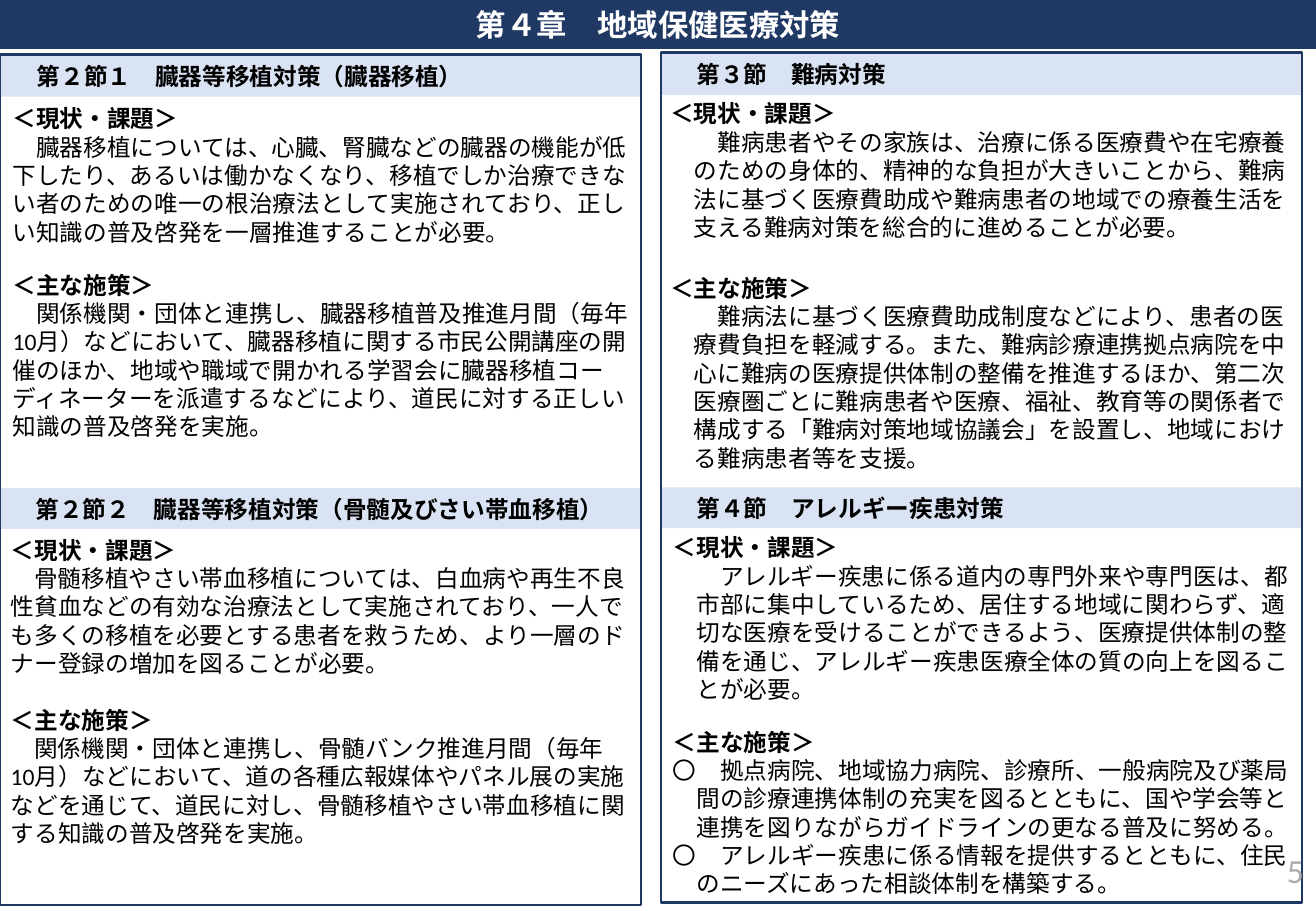
from pptx import Presentation
from pptx.dml.color import RGBColor
from pptx.enum.shapes import MSO_SHAPE as Shape
from pptx.enum.text import MSO_ANCHOR as Anchor, PP_ALIGN as Align
from pptx.util import Pt

NAVY, PALE, BLACK, WHITE, GREY = "203864", "DAE3F3", "000000", "FFFFFF", "AFABAB"
EM = 14
ISSUES, MEASURES = "＜現状・課題＞", "＜主な施策＞"


def color(value):
    return RGBColor.from_string(value)


class SlideBuilder:
    base = {"name": "Calibri", "size": Pt(EM), "bold": False}

    def __init__(self, deck):
        self.page = deck.slides.add_slide(deck.slide_layouts[6])

    def add_span(self, para, text, ink=BLACK, left=0, first=0, **style):
        span = para.add_run()
        span.text = text
        for key, value in {**self.base, **style}.items():
            setattr(span.font, key, value)
        span.font.color.rgb = color(ink)
        properties = para._p.get_or_add_pPr()
        for key, value in {"marL": left, "indent": first}.items():
            properties.set(key, str(int(Pt(value))))

    def rectangle(self, x, y, width, height):
        box = self.page.shapes.add_shape(
            Shape.RECTANGLE, Pt(x), Pt(y), Pt(width), Pt(height))
        box.shadow.inherit = False
        return box

    def bar(self, x, y, width, height, fill, text, align=Align.LEFT, **style):
        box = self.rectangle(x, y, width, height)
        box.fill.solid()
        box.fill.fore_color.rgb = color(fill)
        box.line.fill.background()
        box.text_frame.word_wrap = True
        para = box.text_frame.paragraphs[0]
        para.alignment = align
        self.add_span(para, text, bold=True, **style)

    def frame(self, x, y, width, height):
        box = self.rectangle(x, y, width, height)
        box.fill.background()
        box.line.color.rgb = color(NAVY)
        box.line.width = Pt(1.5)

    def text_box(self, x, y, width, height):
        box = self.page.shapes.add_textbox(Pt(x), Pt(y), Pt(width), Pt(height))
        box.text_frame.word_wrap = True
        return box.text_frame

    def section(self, x, y, width, height, gap, left, issue, measures):
        frame = self.text_box(x, y, width, height)
        para = frame.paragraphs[0]
        self.add_span(para, ISSUES, bold=True)
        self.add_span(frame.add_paragraph(), issue[1], name=issue[0], left=left, first=EM)
        para = frame.add_paragraph()
        para.space_before = Pt(gap)
        self.add_span(para, MEASURES, bold=True)
        font, *items = measures
        for item in items:
            first = -EM if item.startswith("〇") else EM
            self.add_span(frame.add_paragraph(), item, name=font, left=left, first=first)

    def page_number(self, x, y, width, height, text):
        frame = self.text_box(x, y, width, height)
        frame.vertical_anchor = Anchor.MIDDLE
        frame.paragraphs[0].alignment = Align.RIGHT
        self.add_span(frame.paragraphs[0], text, ink=GREY, size=Pt(20))


BARS = [
    (0.7, 33.1, 379, "第２節１　臓器等移植対策（臓器移植）"),
    (391.7, 32.1, 380, "第３節　難病対策"),
    (391.7, 288.9, 380, "第４節　アレルギー疾患対策"),
    (0, 289.4, 380, "第２節２　臓器等移植対策（骨髄及びさい帯血移植）"),
]
FRAMES = [(0, 32.4), (391.7, 31)]
SECTIONS = [
    (390.2, 55.4, 381, 230, 19.2, EM,
     ("Arial", "難病患者やその家族は、治療に係る医療費や在宅療養のための身体的、"
      "精神的な負担が大きいことから、難病法に基づく医療費助成や難病患者の地域での"
      "療養生活を支える難病対策を総合的に進めることが必要。"),
     ("Arial", "難病法に基づく医療費助成制度などにより、患者の医療費負担を軽減する。"
      "また、難病診療連携拠点病院を中心に難病の医療提供体制の整備を推進するほか、"
      "第二次医療圏ごとに難病患者や医療、福祉、教育等の関係者で構成する"
      "「難病対策地域協議会」を設置し、地域における難病患者等を支援。")),
    (391.7, 312.5, 381, 225, 14.4, EM,
     ("Calibri", "アレルギー疾患に係る道内の専門外来や専門医は、都市部に集中しているため、"
      "居住する地域に関わらず、適切な医療を受けることができるよう、医療提供体制の整備を通じ、"
      "アレルギー疾患医療全体の質の向上を図ることが必要。"),
     ("Arial", "〇　拠点病院、地域協力病院、診療所、一般病院及び薬局間の診療連携体制の"
      "充実を図るとともに、国や学会等と連携を図りながらガイドラインの更なる普及に努める。",
      "〇　アレルギー疾患に係る情報を提供するとともに、住民のニーズにあった"
      "相談体制を構築する。")),
    (0.4, 58.3, 380, 208, 14.4, 0,
     ("Arial", "臓器移植については、心臓、腎臓などの臓器の機能が低下したり、"
      "あるいは働かなくなり、移植でしか治療できない者のための唯一の根治療法として"
      "実施されており、正しい知識の普及啓発を一層推進することが必要。"),
     ("Calibri", "関係機関・団体と連携し、臓器移植普及推進月間（毎年10月）などにおいて、"
      "臓器移植に関する市民公開講座の開催のほか、地域や職域で開かれる学習会に"
      "臓器移植コーディネーターを派遣するなどにより、道民に対する正しい知識の普及啓発を実施。")),
    (-0.7, 313.9, 380, 211, 16.8, 0,
     ("Arial", "骨髄移植やさい帯血移植については、白血病や再生不良性貧血などの"
      "有効な治療法として実施されており、一人でも多くの移植を必要とする患者を救うため、"
      "より一層のドナー登録の増加を図ることが必要。"),
     ("Calibri", "関係機関・団体と連携し、骨髄バンク推進月間（毎年10月）などにおいて、"
      "道の各種広報媒体やパネル展の実施などを通じて、道民に対し、"
      "骨髄移植やさい帯血移植に関する知識の普及啓発を実施。")),
]


def main():
    deck = Presentation()
    deck.slide_width, deck.slide_height = Pt(780), Pt(540)
    slide = SlideBuilder(deck)
    slide.bar(0, 0, 780, 29, NAVY, "第４章　地域保健医療対策",
              align=Align.CENTER, ink=WHITE, size=Pt(18))
    for x, y, width, text in BARS:
        slide.bar(x, y, width, 24.2, PALE, text, left=EM)
    for x, y in FRAMES:
        slide.frame(x, y, 380, 504)
    for section in SECTIONS:
        slide.section(*section)
    slide.page_number(604.8, 501, 175.2, 29, "5")
    deck.save("out.pptx")


if __name__ == "__main__":
    main()
